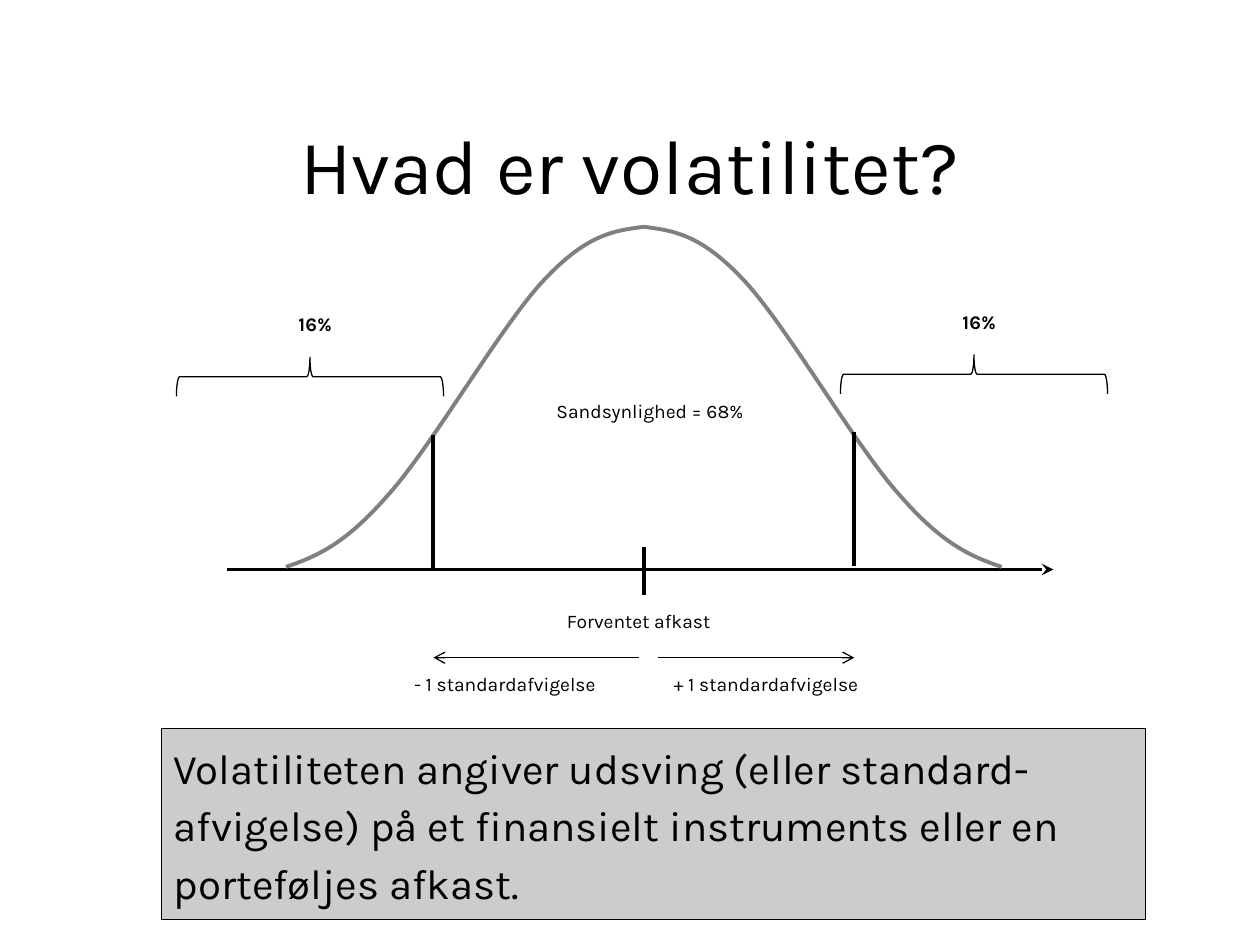
from dataclasses import dataclass

from lxml.etree import SubElement
from pptx import Presentation
from pptx.dml.color import RGBColor
from pptx.enum.shapes import MSO_CONNECTOR as Conn, MSO_SHAPE as Shape
from pptx.enum.text import MSO_ANCHOR as Anchor, PP_ALIGN as Align
from pptx.oxml.ns import qn
from pptx.util import Inches, Pt


@dataclass(frozen=True)
class Theme:
    font: str = "Karla"
    ink: str = "000000"
    curve: str = "808080"
    panel: str = "CCCCCC"
    title: int = 44
    body: int = 24
    label: int = 11
    thin: float = 0.75
    thick: float = 2.25


def grid(*cells):
    """Turn cells of the 100 x 75 grid into slide lengths."""
    return [Inches(cell / 10) for cell in cells]


class Canvas:
    def __init__(self, s, theme):
        self.s, self.theme = s, theme

    def _stroke(self, shape, color, width):
        shape.line.color.rgb = RGBColor.from_string(color)
        shape.line.width = Pt(width)

    def _write(self, shape, text, size, bold=False, wrap=True,
               anchor=Anchor.TOP, **paragraph):
        tf = shape.text_frame
        tf.word_wrap, tf.vertical_anchor = wrap, anchor
        p = tf.paragraphs[0]
        for name, value in paragraph.items():
            setattr(p, name, value)
        r = p.add_run()
        r.text = text
        style = {"name": self.theme.font, "size": Pt(size), "bold": bold}
        for name, value in style.items():
            setattr(r.font, name, value)
        r.font.color.rgb = RGBColor.from_string(self.theme.ink)

    def text(self, box, text, size=None, alignment=Align.CENTER, **style):
        shape = self.s.shapes.add_textbox(*grid(*box))
        self._write(shape, text, size or self.theme.label,
                    alignment=alignment, **style)

    def panel(self, box, text):
        sp = self.s.shapes.add_shape(Shape.RECTANGLE, *grid(*box))
        sp.shadow.inherit = False
        sp.fill.solid()
        sp.fill.fore_color.rgb = RGBColor.from_string(self.theme.panel)
        self._stroke(sp, self.theme.ink, self.theme.thin)
        self._write(sp, text, self.theme.body, alignment=Align.LEFT,
                    line_spacing=1.15, space_after=Pt(10))

    def line(self, start, end, width, arrow=None):
        line = self.s.shapes.add_connector(Conn.STRAIGHT, *grid(*start, *end))
        self._stroke(line, self.theme.ink, width)
        if arrow:
            SubElement(line.line._get_or_add_ln(), qn("a:tailEnd"), type=arrow)
        SubElement(line._element.spPr, qn("a:effectLst"))

    def brace(self, center, middle, length, depth):
        """Draw a brace lying flat, with its point upwards."""
        box = grid(center - depth / 2, middle - length / 2, depth, length)
        sp = self.s.shapes.add_shape(Shape.RIGHT_BRACE, *box)
        sp.rotation = 270
        sp.shadow.inherit = False
        sp.fill.background()
        self._stroke(sp, self.theme.ink, self.theme.thin)

    def bezier(self, points):
        """Draw a chain of cubic curves: a start, then three points for each."""
        start, *rest = [grid(*point) for point in points]
        builder = self.s.shapes.build_freeform(*start)
        builder.add_line_segments(rest, close=False)
        sp = builder.convert_to_shape()
        sp.shadow.inherit = False
        sp.fill.background()
        self._stroke(sp, self.theme.curve, self.theme.thick)
        outline = next(sp._element.iter(qn("a:path")))
        for i, segment in enumerate(outline.findall(qn("a:lnTo"))):
            if i % 3 == 0:
                cubic = SubElement(outline, qn("a:cubicBezTo"))
            cubic.append(segment[0])
            outline.remove(segment)


MEAN, SIGMA, AXIS = 51.1, 16.7, 45.2
# Offset from the mean and row, from the peak down to the axis
HALF_BELL = [(0, 18), (2.2, 18.3), (4.4, 18.5), (7.8, 22.1), (11.2, 25.6),
             (16.9, 35.6), (20.4, 39.4), (23.8, 43.3), (26.1, 44.2), (28.4, 45)]
# Side, arrow start, label centre, tail centre, tail rise
SIDES = [(-1, "-", 50.7, 40.1, 24.6, 0), (1, "+", 52.2, 60.8, 77.3, 0.2)]


def main():
    prs = Presentation()
    prs.slide_width, prs.slide_height = grid(100, 75)
    theme = Theme()
    c = Canvas(prs.slides.add_slide(prs.slide_layouts[6]), theme)

    c.text((7.5, 6.7, 85, 12.5), "Hvad er volatilitet?", theme.title,
           anchor=Anchor.MIDDLE)
    c.line((18, AXIS), (83.6, AXIS), theme.thick, "stealth")
    for side, sign, start, label, tail, rise in SIDES:
        edge = MEAN + side * SIGMA
        c.bezier([(MEAN + side * dx, y) for dx, y in HALF_BELL])
        c.line((edge, 34.5 - rise), (edge, 45.1 - rise), theme.thick)
        c.brace(tail, 29.9 - rise, 21.2, 3.1)
        c.text((tail - 1.9, 24.3 - rise, 4.9, 2.9), "16%", bold=True,
               wrap=False, alignment=Align.LEFT)
        c.line((start, 52.2), (edge, 52.2), theme.thin, "arrow")
        c.text((label - 10, 52.9, 20, 4.3), f"{sign} 1 standardafvigelse")
    c.line((MEAN, 43.4), (MEAN, 47.2), theme.thick)
    c.text((38.2, 47.9, 25, 4.3), "Forventet afkast")
    c.text((39.1, 31.2, 25, 4.3), "Sandsynlighed = 68%")
    c.panel((12.8, 57.8, 78.1, 15.2),
            "Volatiliteten angiver udsving (eller standard-afvigelse) på et "
            "finansielt instruments eller en porteføljes afkast.")
    prs.save("out.pptx")


if __name__ == "__main__":
    main()
